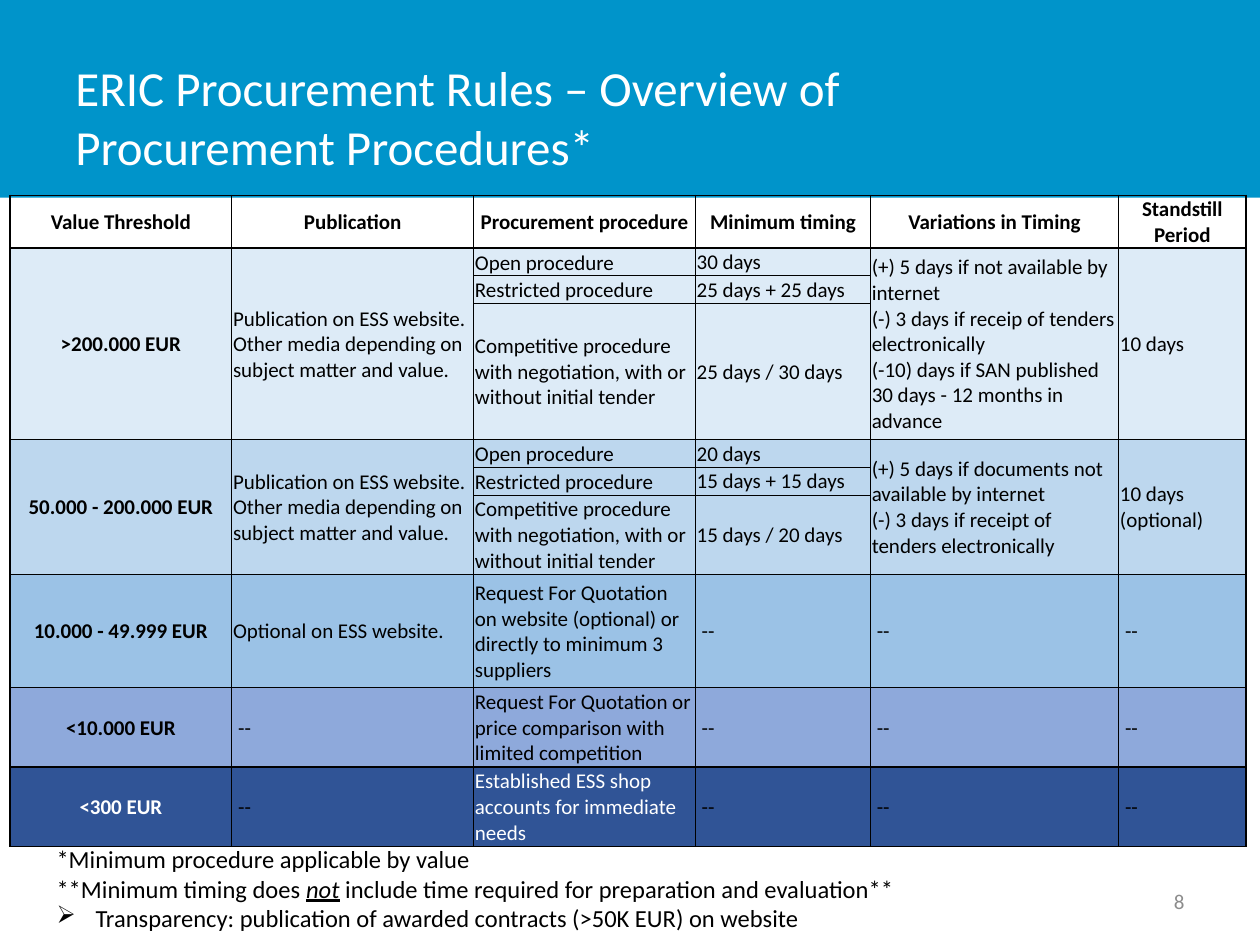
import pptx
import pptx.util
import pptx.dml.color
import pptx.enum.shapes
import pptx.enum.text
from dataclasses import dataclass
from lxml import etree

Inches = pptx.util.Inches
Align = pptx.enum.text.PP_ALIGN
Anchor = pptx.enum.text.MSO_ANCHOR


@dataclass(frozen=True)
class Theme:
    font: str = "Calibri"
    band: str = "0094CA"
    white: str = "FFFFFF"
    black: str = "000000"
    grey: str = "8C8C8C"
    tints: tuple = ("DDEBF7", "BDD7EE", "9BC2E6", "8EA9DB", "305496")
    title: int = 28
    note: int = 14
    small: int = 12
    thin: float = 0.5
    thick: float = 1


theme = Theme()


def style(frame, size, color, bold=False, align=Align.LEFT):
    for para in frame.paragraphs:
        para.alignment = align
        for run in para.runs:
            run.font.name = theme.font
            run.font.size = pptx.util.Pt(size)
            run.font.bold = bold
            run.font.color.rgb = pptx.dml.color.RGBColor.from_string(color)


def edge(cell, side, width):
    """Draw one border of a table cell; side is L, R, T or B."""
    props = cell._tc.get_or_add_tcPr()
    line = etree.SubElement(props, pptx.oxml.ns.qn(f"a:ln{side}"), w=str(pptx.util.Pt(width)))
    fill = etree.SubElement(line, pptx.oxml.ns.qn("a:solidFill"))
    etree.SubElement(fill, pptx.oxml.ns.qn("a:srgbClr"), val=theme.black)


deck = pptx.Presentation()
deck.slide_width, deck.slide_height = Inches(10), Inches(7.5)
slide = deck.slides.add_slide(deck.slide_layouts[6])
shapes = slide.shapes

# Title band
band = shapes.add_shape(pptx.enum.shapes.MSO_SHAPE.RECTANGLE, 0, 0, Inches(10), Inches(1.57))
band.shadow.inherit = False
band.fill.solid()
band.fill.fore_color.rgb = pptx.dml.color.RGBColor.from_string(theme.band)
band.line.fill.background()

title = shapes.add_textbox(Inches(0.5), Inches(0.3), Inches(7.81), Inches(1.25)).text_frame
title.word_wrap = True
title.vertical_anchor = Anchor.MIDDLE
title.text = "ERIC Procurement Rules – Overview of Procurement Procedures*"
style(title, theme.title, theme.white)

# Page number
page = shapes.add_textbox(Inches(7.17), Inches(6.95), Inches(2.33), Inches(0.4)).text_frame
page.word_wrap = True
page.vertical_anchor = Anchor.MIDDLE
page.text = "8"
style(page, theme.small, theme.grey, align=Align.RIGHT)

# Footnotes
notes = shapes.add_textbox(Inches(0.35), Inches(6.65), Inches(8.82), Inches(0.81)).text_frame
notes.word_wrap = True
notes.text = "*Minimum procedure applicable by value"
timing = notes.add_paragraph()
for part in ("**Minimum timing does ", "not", " include time required for preparation and evaluation**"):
    run = timing.add_run()
    run.text = part
    run.font.italic = run.font.underline = part == "not"
point = notes.add_paragraph()
point.text = "Transparency: publication of awarded contracts (>50K EUR) on website"
props = point._p.get_or_add_pPr()
props.set("marL", str(Inches(0.31)))
props.set("indent", str(-Inches(0.31)))
etree.SubElement(props, pptx.oxml.ns.qn("a:buChar"), char="➢")
style(notes, theme.note, theme.black)

# Table content: each group is threshold, publication, [(procedure, timing)], variations, standstill
heads = ("Value Threshold", "Publication", "Procurement procedure",
         "Minimum timing", "Variations in Timing", "Standstill Period")
media = "Publication on ESS website. Other media depending on subject matter and value."
talks = "Competitive procedure with negotiation, with or without initial tender"
none = "--"
groups = (
    (">200.000 EUR", media,
     [("Open procedure", "30 days"), ("Restricted procedure", "25 days + 25 days"),
      (talks, "25 days / 30 days")],
     "(+) 5 days if not available by internet\v(-) 3 days if receip of tenders electronically\v"
     "(-10) days if SAN published 30 days - 12 months in advance", "10 days"),
    ("50.000 - 200.000 EUR", media,
     [("Open procedure", "20 days"), ("Restricted procedure", "15 days + 15 days"),
      (talks, "15 days / 20 days")],
     "(+) 5 days if documents not available by internet\v"
     "(-) 3 days if receipt of tenders electronically", "10 days (optional)"),
    ("10.000 - 49.999 EUR", "Optional on ESS website.",
     [("Request For Quotation on website (optional) or directly to minimum 3 suppliers", none)],
     none, none),
    ("<10.000 EUR", none,
     [("Request For Quotation or price comparison with limited competition", none)], none, none),
    ("<300 EUR", none,
     [("Established ESS shop accounts for immediate needs", none)], none, none),
)
widths = (1.76, 1.92, 1.76, 1.39, 1.97, 1.01)
heights = (0.42, 0.22, 0.22, 1.08, 0.22, 0.22, 0.63, 0.9, 0.63, 0.63)

frame = shapes.add_table(len(heights), len(widths), Inches(0.08), Inches(1.55),
                         Inches(9.81), Inches(5.16))
table = frame.table
table.first_row = table.horz_banding = False
for col, width in zip(table.columns, widths):
    col.width = Inches(width)
for row, height in zip(table.rows, heights):
    row.height = Inches(height)

# One entry per table row: texts, fill, starts a group, ends a group
lines = [(heads, None, True, True)]
for (value, media, steps, shift, still), tint in zip(groups, theme.tints):
    top, last = len(lines), len(steps) - 1
    for i, (step, time) in enumerate(steps):
        outer = (value, media, shift, still) if i == 0 else ("",) * 4
        lines.append(((*outer[:2], step, time, *outer[2:]), tint, i == 0, i == last))
    if last:
        for c in (0, 1, 4, 5):
            table.cell(top, c).merge(table.cell(top + last, c))

for r, (texts, tint, first, final) in enumerate(lines):
    for c, text in enumerate(texts):
        cell = table.cell(r, c)
        head, inner = tint is None, c in (2, 3)
        cell.vertical_anchor = Anchor.BOTTOM if text in ("Open procedure", "Restricted procedure") else Anchor.MIDDLE
        cell.margin_left = Inches(0.05 if text == none else 0.01)
        cell.margin_right = cell.margin_top = Inches(0.01)
        cell.margin_bottom = 0
        cell.text_frame.text = text
        dark = tint == theme.tints[-1] and text != none
        strong = head or c == 0
        style(cell.text_frame, theme.small, theme.white if dark else theme.black,
              strong, Align.CENTER if strong else Align.LEFT)
        edge(cell, "L", theme.thick if c == 0 else theme.thin)
        edge(cell, "R", theme.thick if c == len(widths) - 1 else theme.thin)
        edge(cell, "T", theme.thick if first or not inner else theme.thin)
        edge(cell, "B", theme.thick if final or not inner else theme.thin)
        if head:
            cell.fill.background()
        else:
            cell.fill.solid()
            cell.fill.fore_color.rgb = pptx.dml.color.RGBColor.from_string(tint)

deck.save("out.pptx")
